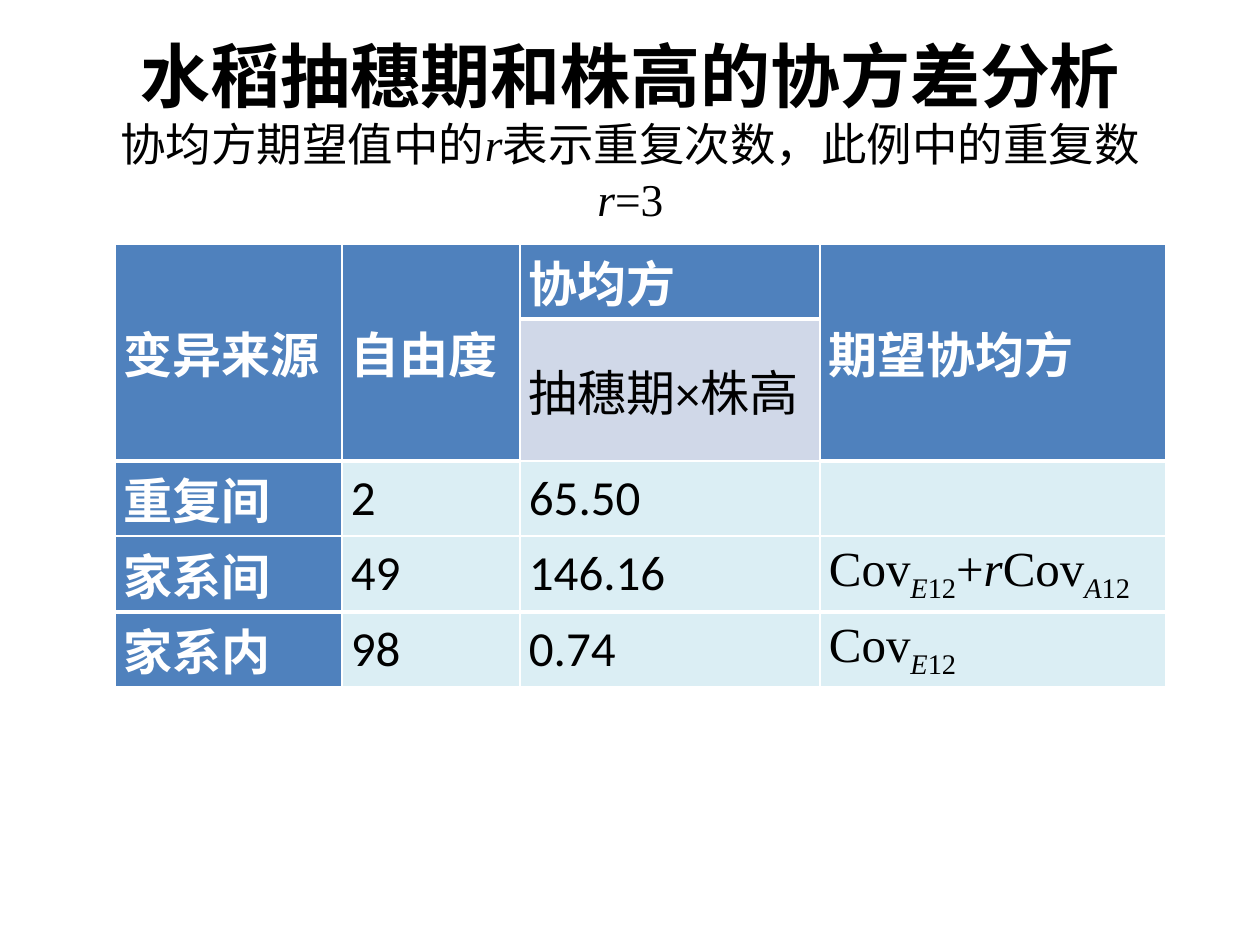
from lxml.etree import SubElement
from pptx import Presentation
from pptx.dml.color import RGBColor
from pptx.enum.text import MSO_ANCHOR, PP_ALIGN
from pptx.oxml.ns import qn
from pptx.util import Emu, Pt

COLORS = {"text": "000000", "header": "4F81BD", "subheader": "D0D8E8",
          "body": "DBEEF4", "white": "FFFFFF"}
SERIF, SANS = "Times New Roman", "Calibri"

COLUMN_WIDTHS = [227, 178, 300, 346]
ROW_HEIGHTS = [75, 142, 75, 76, 75]  # the sub-header row holds two lines
MERGED_COLUMNS = (0, 1, 3)
SUBHEADER = (1, 2)

# Rich text is a list of (text, style): "i" italic, "s" subscript
COV_E12 = [("Cov", ""), ("E", "is"), ("12", "s")]
COV_A12 = [("Cov", ""), ("A", "is"), ("12", "s")]
ROWS = [
    ["变异来源", "自由度", "协均方", "期望协均方"],
    ["", "", "抽穗期×株高", ""],
    ["重复间", "2", "65.50", ""],
    ["家系间", "49", "146.16", COV_E12 + [("+", ""), ("r", "i")] + COV_A12],
    ["家系内", "98", "0.74", COV_E12],
]
SUBTITLE = [("协均方期望值中的", ""), ("r", "i"),
            ("表示重复次数，此例中的重复数", ""), ("r", "i"), ("=3", "")]


def px(length):
    return Emu(round(length * 914400 / 126))


def add_runs(paragraph, pieces, size, font_name, color, bold=False):
    for text, style in pieces:
        run = paragraph.add_run()
        run.text = text
        font = run.font
        font.size, font.name, font.bold = Pt(size), font_name, bold
        font.italic = "i" in style
        font.color.rgb = RGBColor.from_string(COLORS[color])
        if "s" in style:
            run._r.get_or_add_rPr().set("baseline", "-25000")


def add_title(slide, left, top, width, height):
    box = slide.shapes.add_textbox(px(left), px(top), px(width), px(height))
    text_frame = box.text_frame
    text_frame.word_wrap = True
    text_frame.vertical_anchor = MSO_ANCHOR.MIDDLE
    paragraph = text_frame.paragraphs[0]
    paragraph.alignment = PP_ALIGN.CENTER
    add_runs(paragraph, [("水稻抽穗期和株高的协方差分析", "")], 40, SERIF, "text", bold=True)
    paragraph.add_line_break()
    add_runs(paragraph, SUBTITLE, 26, SERIF, "text")


def set_borders(cell, widths):
    properties = cell._tc.get_or_add_tcPr()
    for side, width in zip("LRTB", widths):
        line = SubElement(properties, qn(f"a:ln{side}"), w=str(Pt(width)))
        fill = SubElement(line, qn("a:solidFill"))
        SubElement(fill, qn("a:srgbClr"), val=COLORS["white"])


def rule_width(line, column):
    """Width of the horizontal rule above row number `line`."""
    thick = line in (1, 4) or (line == 2 and column in MERGED_COLUMNS)
    return 3 if thick else 1


def fill_cell(cell, row, column, content):
    is_header = row == 0 or column == 0 or (row == 1 and column in MERGED_COLUMNS)
    set_borders(cell, (1, 1, rule_width(row, column), rule_width(row + 1, column)))
    fill = "header" if is_header else "subheader" if (row, column) == SUBHEADER else "body"
    cell.fill.solid()
    cell.fill.fore_color.rgb = RGBColor.from_string(COLORS[fill])
    cell.vertical_anchor = MSO_ANCHOR.MIDDLE
    cell.margin_left = cell.margin_right = px(9)
    cell.margin_top = cell.margin_bottom = 0
    if not content:
        return
    paragraph = cell.text_frame.paragraphs[0]
    paragraph.alignment = PP_ALIGN.JUSTIFY
    is_plain = isinstance(content, str)
    add_runs(paragraph, [(content, "")] if is_plain else content, 28,
             SANS if is_plain else SERIF, "white" if is_header else "text", bold=is_header)


def add_covariance_table(slide, left, top):
    frame = slide.shapes.add_table(len(ROWS), len(COLUMN_WIDTHS), px(left), px(top),
                                   px(sum(COLUMN_WIDTHS)), px(sum(ROW_HEIGHTS)))
    table = frame.table
    table.first_row = table.horz_banding = False
    for column, width in zip(table.columns, COLUMN_WIDTHS):
        column.width = px(width)
    for row, height in zip(table.rows, ROW_HEIGHTS):
        row.height = px(height)
    for row, contents in enumerate(ROWS):
        for column, content in enumerate(contents):
            fill_cell(table.cell(row, column), row, column, content)
    # Headings that span both header rows
    for column in MERGED_COLUMNS:
        table.cell(0, column).merge(table.cell(1, column))


def main():
    presentation = Presentation()
    presentation.slide_width, presentation.slide_height = px(1260), px(945)
    slide = presentation.slides.add_slide(presentation.slide_layouts[6])
    add_title(slide, 75, 46, 1111, 166)
    add_covariance_table(slide, 115, 244)
    presentation.save("out.pptx")


if __name__ == "__main__":
    main()
